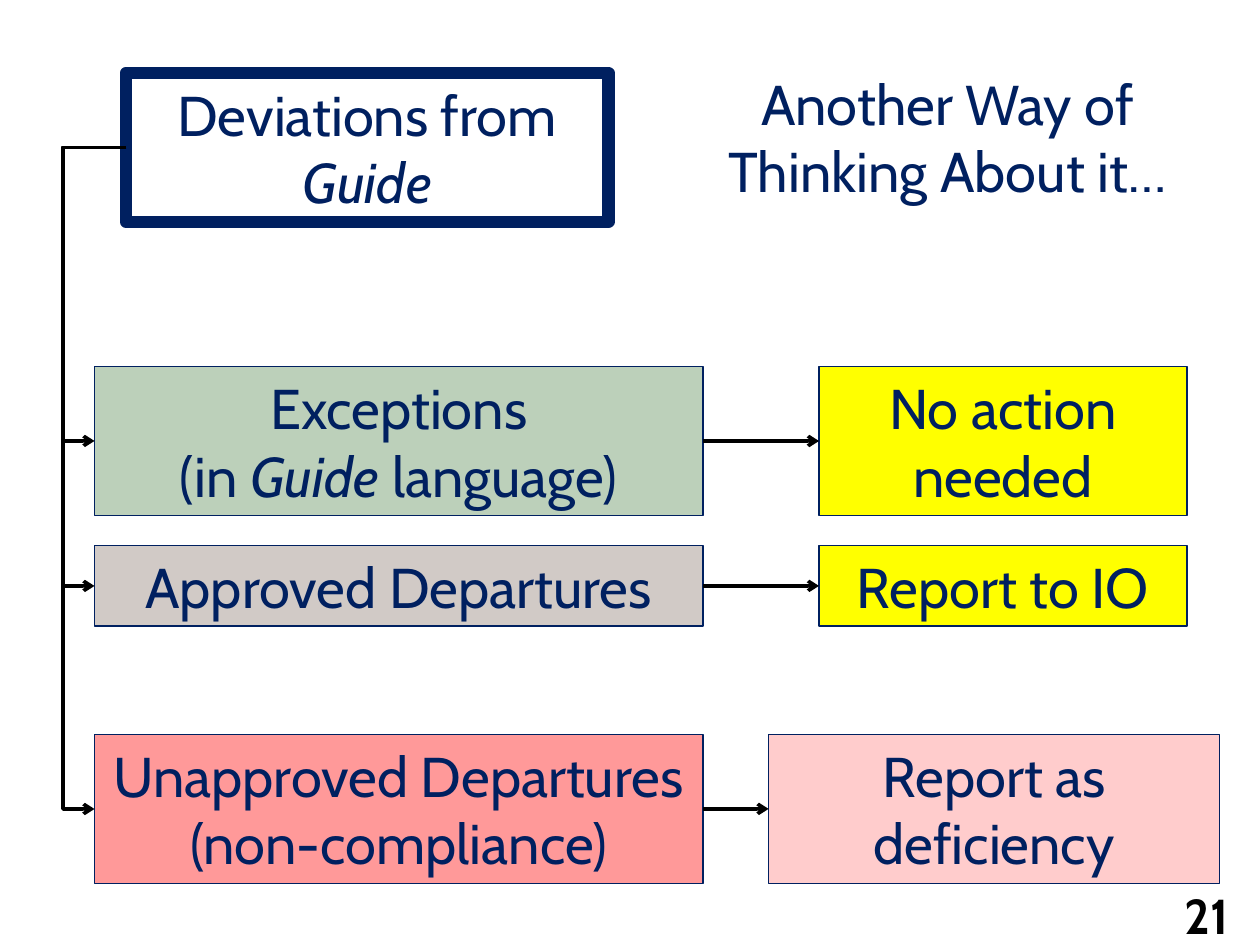
from dataclasses import dataclass

from lxml import etree
from pptx import Presentation
from pptx.dml.color import RGBColor
from pptx.enum.shapes import MSO_CONNECTOR, MSO_SHAPE
from pptx.enum.text import MSO_ANCHOR, MSO_AUTO_SIZE, PP_ALIGN
from pptx.oxml.ns import qn
from pptx.util import Inches, Pt

STRAIGHT, ELBOW = MSO_CONNECTOR.STRAIGHT, MSO_CONNECTOR.ELBOW
RECTANGLE = MSO_SHAPE.RECTANGLE
MIDDLE, BOTTOM = MSO_ANCHOR.MIDDLE, MSO_ANCHOR.BOTTOM
FIT_SHAPE, NO_FIT = MSO_AUTO_SIZE.SHAPE_TO_FIT_TEXT, MSO_AUTO_SIZE.NONE
CENTER = PP_ALIGN.CENTER
LEFT_SITE, RIGHT_SITE = 1, 3
TITLE_ONLY = 5


@dataclass(frozen=True)
class Theme:
    """Colours, font and type sizes of the slide."""
    font: str = "Cabin"
    navy: str = "002060"
    black: str = "000000"
    green: str = "BCD0BA"
    taupe: str = "D1CAC6"
    red: str = "FF9999"
    yellow: str = "FFFF00"
    pink: str = "FFCCCC"
    body_size: int = 32
    number_size: int = 28
    thin_line: float = 0.75
    arrow_line: float = 2
    frame_line: float = 7


class FlowSlide:
    """Draws the elements of a flow chart on one slide."""

    def __init__(self, slide, theme):
        self.slide = slide
        self.theme = theme

    def fill_text(self, text_frame, text, anchor, auto_size=NO_FIT):
        """Fill a text frame, with words between asterisks in italics."""
        text_frame.word_wrap = True
        text_frame.auto_size = auto_size
        text_frame.vertical_anchor = anchor
        text_frame.text = text.replace("*", "")
        for paragraph, line in zip(text_frame.paragraphs, text.split("\n")):
            paragraph.alignment = CENTER
            paragraph.text = ""
            for index, part in enumerate(line.split("*")):
                if part:
                    run = paragraph.add_run()
                    run.text = part
                    run.font.italic = index % 2 == 1
                    self.format_font(run.font, self.theme.body_size, self.theme.navy)

    def format_font(self, font, size, color):
        """Apply the theme font in a size and colour."""
        font.name = self.theme.font
        font.size = Pt(size)
        font.color.rgb = RGBColor.from_string(color)

    def title(self, text, left, top, width, height):
        """Place and fill the title."""
        title = self.slide.shapes.title
        title.left, title.top = Inches(left), Inches(top)
        title.width, title.height = Inches(width), Inches(height)
        self.fill_text(title.text_frame, text, BOTTOM)

    def box(self, text, left, top, width, height, fill=None, line_width=None):
        """Add an outlined rectangle with centred text."""
        shape = self.slide.shapes.add_shape(
            RECTANGLE, Inches(left), Inches(top), Inches(width), Inches(height))
        shape.shadow.inherit = False
        if fill:
            shape.fill.solid()
            shape.fill.fore_color.rgb = RGBColor.from_string(fill)
        else:
            shape.fill.background()
        shape.line.color.rgb = RGBColor.from_string(self.theme.navy)
        shape.line.width = Pt(line_width or self.theme.thin_line)
        self.fill_text(shape.text_frame, text, MIDDLE, FIT_SHAPE)
        return shape

    def arrow(self, kind, source, source_site, target):
        """Connect a side of one box to the left side of another."""
        connector = self.slide.shapes.add_connector(kind, 0, 0, 0, 0)
        connector.begin_connect(source, source_site)
        connector.end_connect(target, LEFT_SITE)
        connector.line.color.rgb = RGBColor.from_string(self.theme.black)
        connector.line.width = Pt(self.theme.arrow_line)
        properties = connector._element.spPr
        etree.SubElement(properties.find(qn("a:ln")), qn("a:tailEnd"), type="arrow")
        etree.SubElement(properties, qn("a:effectLst"))
        return connector

    def branch(self, source, target):
        """Lead an elbow arrow around the left from one box to another."""
        connector = self.arrow(ELBOW, source, LEFT_SITE, target)
        properties = connector._element.spPr
        transform = properties.find(qn("a:xfrm"))
        transform.attrib.pop("flipH", None)
        transform.set("rot", "10800000")
        transform.set("flipV", "1")
        geometry = properties.find(qn("a:prstGeom"))
        guides = geometry.find(qn("a:avLst"))
        if guides is None:
            guides = etree.SubElement(geometry, qn("a:avLst"))
        etree.SubElement(guides, qn("a:gd"), name="adj1", fmla="val 200000")

    def page_number(self, text, left, top, width, height):
        """Add the bold page number."""
        text_box = self.slide.shapes.add_textbox(
            Inches(left), Inches(top), Inches(width), Inches(height))
        text_frame = text_box.text_frame
        text_frame.margin_left = text_frame.margin_right = Inches(0.05)
        self.fill_text(text_frame, text, MIDDLE)
        font = text_frame.paragraphs[0].runs[0].font
        self.format_font(font, self.theme.number_size, self.theme.black)
        font.bold = True


def main():
    """Build and save the slide."""
    presentation = Presentation()
    presentation.slide_width, presentation.slide_height = Inches(10), Inches(7.5)
    slide = presentation.slides.add_slide(presentation.slide_layouts[TITLE_ONLY])
    theme = Theme()
    flow = FlowSlide(slide, theme)

    flow.title("Another Way of Thinking About it…", 5.25, 0.84, 4.54, 0.83)
    deviations = flow.box("Deviations from *Guide*", 1, 0.58, 3.83, 1.18,
                          line_width=theme.frame_line)
    rows = [
        ("Exceptions\n(in *Guide* language)", theme.green, 2.91, 1.18,
         "No action needed", theme.yellow, 6.5, 2.92),
        ("Approved Departures", theme.taupe, 4.33, 0.64,
         "Report to IO", theme.yellow, 6.5, 2.92),
        ("Unapproved Departures (non-compliance)", theme.red, 5.83, 1.18,
         "Report as deficiency", theme.pink, 6.1, 3.58),
    ]
    for kind, kind_fill, top, height, action, action_fill, left, width in rows:
        kind_box = flow.box(kind, 0.75, top, 4.83, height, kind_fill)
        action_box = flow.box(action, left, top, width, height, action_fill)
        flow.branch(deviations, kind_box)
        flow.arrow(STRAIGHT, kind_box, RIGHT_SITE, action_box)
    flow.page_number("21", 9.17, 7.02, 0.81, 0.48)

    presentation.save("out.pptx")


if __name__ == "__main__":
    main()
